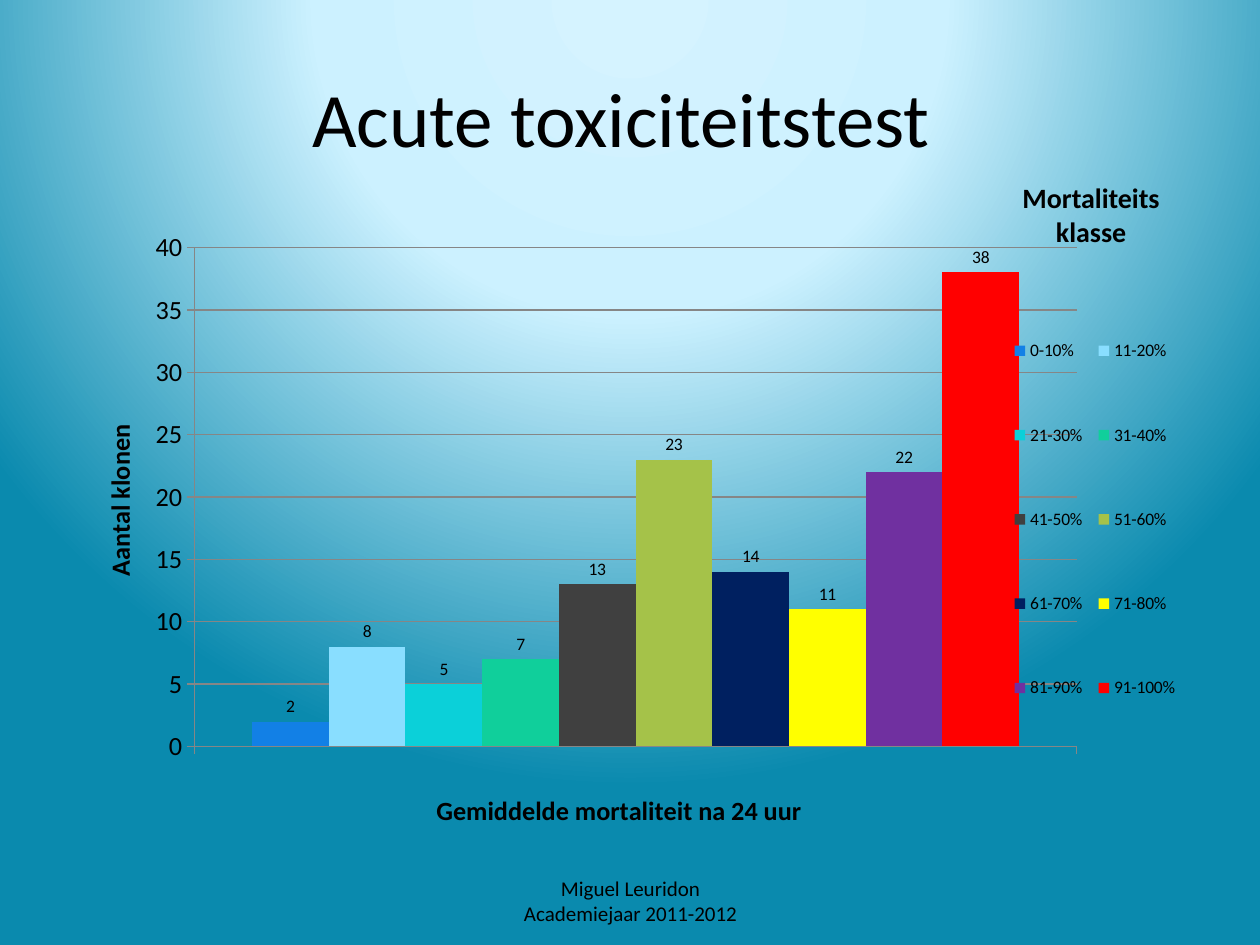
import pptx
import pptx.util
import pptx.chart.data
import pptx.dml.color
import pptx.enum.chart
import pptx.enum.text
import pptx.oxml
import pptx.oxml.ns

RGB = pptx.dml.color.RGBColor
Pt = pptx.util.Pt
NS = pptx.oxml.ns.nsdecls
qn = pptx.oxml.ns.qn
FONT = "Calibri"
BLACK = RGB(0x00, 0x00, 0x00)
GRAY = RGB(0x86, 0x86, 0x86)

# Mortality class, number of clones, bar colour
BARS = [
    ("0-10%", 2, RGB(0x12, 0x80, 0xE6)),
    ("11-20%", 8, RGB(0x89, 0xDE, 0xFF)),
    ("21-30%", 5, RGB(0x0B, 0xD0, 0xD9)),
    ("31-40%", 7, RGB(0x10, 0xCF, 0x9B)),
    ("41-50%", 13, RGB(0x40, 0x40, 0x40)),
    ("51-60%", 23, RGB(0xA5, 0xC2, 0x49)),
    ("61-70%", 14, RGB(0x00, 0x20, 0x60)),
    ("71-80%", 11, RGB(0xFF, 0xFF, 0x00)),
    ("81-90%", 22, RGB(0x70, 0x30, 0xA0)),
    ("91-100%", 38, RGB(0xFF, 0x00, 0x00)),
]
GLOW = [(0, "D5F3FF"), (40, "CCF1FF"), (100, "0A8AAE")]


class Deck:
    """Holds the style and the current slide; boxes are shares of the slide."""

    def __init__(self):
        self.prs = pptx.Presentation()
        self.prs.slide_width = pptx.util.Inches(10)
        self.prs.slide_height = pptx.util.Inches(7.5)
        self.slide = self.prs.slides.add_slide(self.prs.slide_layouts[5])

    def area(self, x, y, w, h):
        wide, high = self.prs.slide_width, self.prs.slide_height
        return int(x * wide), int(y * high), int(w * wide), int(h * high)

    def font(self, font, size, bold=False):
        font.name, font.size, font.bold = FONT, Pt(size), bold
        font.color.rgb = BLACK

    def back(self, stops):
        self.slide.background.fill.solid()
        prop = self.slide._element.cSld.bg.bgPr
        marks = "".join(
            f'<a:gs pos="{pos * 1000}"><a:srgbClr val="{tone}"/></a:gs>'
            for pos, tone in stops)
        grad = pptx.oxml.parse_xml(
            f'<a:gradFill {NS("a")} rotWithShape="1"><a:gsLst>{marks}</a:gsLst>'
            '<a:path path="circle"><a:fillToRect l="50000" t="-80000" '
            'r="50000" b="180000"/></a:path></a:gradFill>')
        prop.replace(prop[0], grad)

    def fill(self, shape, text, size, bold=False, mid=True):
        frame = shape.text_frame
        frame.text = text
        frame.word_wrap = True
        anchor = pptx.enum.text.MSO_ANCHOR
        frame.vertical_anchor = anchor.MIDDLE if mid else anchor.TOP
        for para in frame.paragraphs:
            para.alignment = pptx.enum.text.PP_ALIGN.CENTER
            for run in para.runs:
                self.font(run.font, size, bold)

    def title(self, text, box):
        shape = self.slide.shapes.title
        shape.left, shape.top, shape.width, shape.height = self.area(*box)
        self.fill(shape, text, 44)
        prop = shape.text_frame.paragraphs[0]._p.get_or_add_pPr()
        prop.set("marL", str(pptx.util.Inches(0.56)))
        prop.set("indent", str(pptx.util.Inches(-0.56)))

    def text(self, text, box, size, **look):
        shape = self.slide.shapes.add_textbox(*self.area(*box))
        self.fill(shape, text, size, **look)

    def place(self, node, x, y, w=None, h=None):
        """Set the manual layout of a chart part, in shares of the chart."""
        for old in node.findall(qn("c:layout")):
            node.remove(old)
        inner = node.tag == qn("c:plotArea")
        vals = [("layoutTarget", "inner")] if inner else []
        vals += [("xMode", "edge"), ("yMode", "edge"), ("x", x), ("y", y)]
        if w:
            vals += [("w", w), ("h", h)]
        body = "".join(f'<c:{key} val="{val}"/>' for key, val in vals)
        part = pptx.oxml.parse_xml(
            f'<c:layout {NS("c")}><c:manualLayout>{body}'
            '</c:manualLayout></c:layout>')
        if inner:
            node.insert(0, part)
        else:
            node.find(qn("c:overlay")).addprevious(part)

    def axis(self, axis, text, spot):
        frame = axis.axis_title.text_frame
        frame.text = text
        self.font(frame.paragraphs[0].runs[0].font, 15, True)
        self.place(axis.axis_title._element, *spot)
        axis.major_tick_mark = pptx.enum.chart.XL_TICK_MARK.OUTSIDE
        axis.format.line.color.rgb = GRAY
        axis.format.line.width = Pt(0.75)

    def chart(self, bars, box):
        data = pptx.chart.data.CategoryChartData()
        data.categories = ["1"]
        for name, count, _ in bars:
            data.add_series(name, [count])
        kind = pptx.enum.chart.XL_CHART_TYPE.COLUMN_CLUSTERED
        chart = self.slide.shapes.add_chart(
            kind, *self.area(*box), data).chart
        self.font(chart.font, 10)
        chart.has_title = False

        # Bars and value labels
        plot = chart.plots[0]
        plot.gap_width, plot.overlap = 150, 0
        plot.vary_by_categories = False
        for item, (_, _, tone) in zip(plot.series, bars):
            item.format.fill.solid()
            item.format.fill.fore_color.rgb = tone
            item.invert_if_negative = False
            item.data_labels.show_value = True
            item.data_labels.position = (
                pptx.enum.chart.XL_LABEL_POSITION.OUTSIDE_END)

        # Axes
        cat, val = chart.category_axis, chart.value_axis
        self.axis(cat, "Gemiddelde mortaliteit na 24 uur", (0.325, 0.91))
        self.axis(val, "Aantal klonen", (0.03, 0.32))
        cat.tick_label_position = pptx.enum.chart.XL_TICK_LABEL_POSITION.NONE
        val.minimum_scale, val.maximum_scale, val.major_unit = 0, 40, 5
        self.font(val.tick_labels.font, 15)
        line = val.major_gridlines.format.line
        line.color.rgb, line.width = GRAY, Pt(0.75)

        # Legend over the right edge of the plot
        chart.has_legend = True
        chart.legend.position = pptx.enum.chart.XL_LEGEND_POSITION.RIGHT
        chart.legend.include_in_layout = False
        self.font(chart.legend.font, 10)
        self.place(chart.legend._element, 0.83, 0.09, 0.16, 0.78)
        area = chart._chartSpace.chart.plotArea
        self.place(area, 0.116, 0.044, 0.778, 0.8)


def main():
    deck = Deck()
    deck.back(GLOW)
    deck.title("Acute toxiciteitstest ", (0.05, 0.04, 0.9, 1 / 6))
    # Footer
    deck.text("Miguel Leuridon\nAcademiejaar 2011-2012",
              (0.342, 0.927, 0.317, 0.053), 12)
    # Chart and the heading of its legend
    deck.chart(BARS, (0.05, 0.233, 0.9, 0.66))
    deck.text("Mortaliteitsklasse", (0.799, 0.185, 0.134, 0.085), 16,
              bold=True, mid=False)
    deck.prs.save("out.pptx")


if __name__ == "__main__":
    main()
